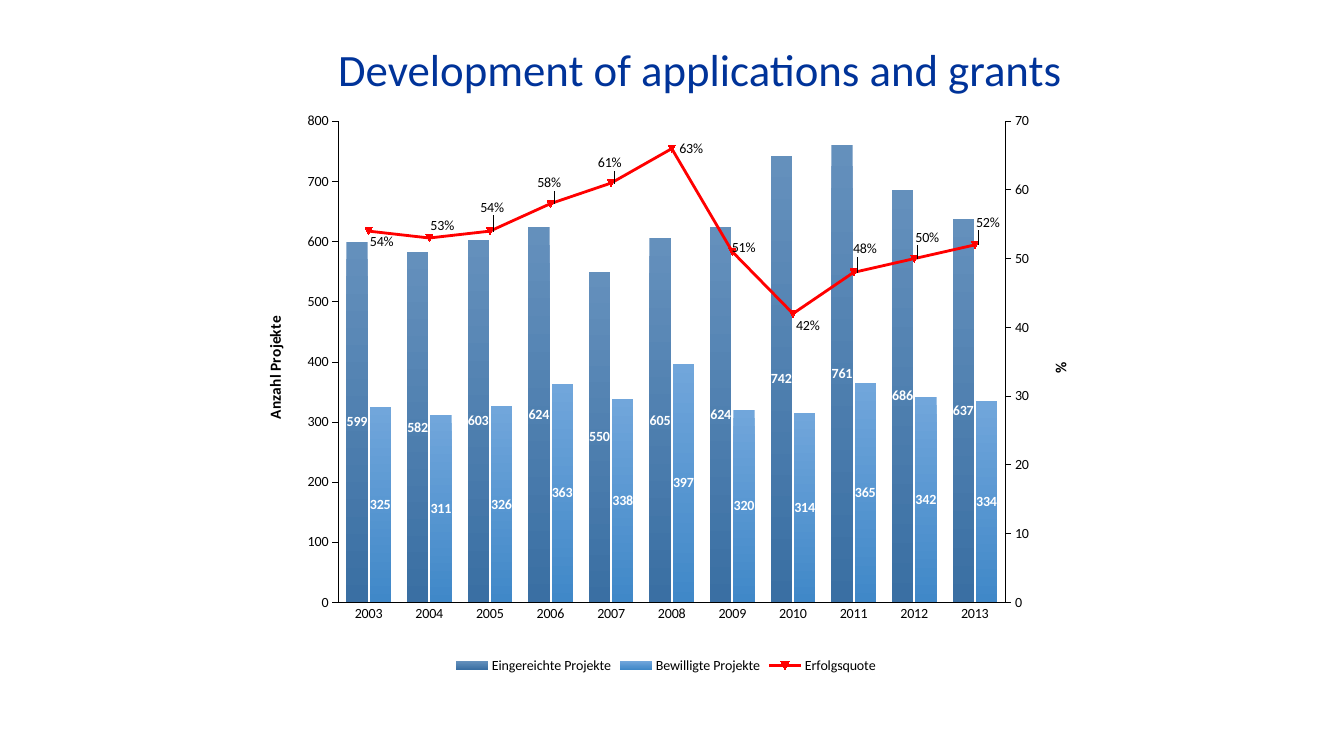
import copy
import dataclasses

import pptx
import pptx.chart.axis
import pptx.chart.data
import pptx.dml.color
import pptx.enum.chart
import pptx.enum.text
import pptx.oxml
import pptx.oxml.ns
import pptx.util

Pt = pptx.util.Pt
qn = pptx.oxml.ns.qn


@dataclasses.dataclass(frozen=True)
class Theme:
    """Colours, font and type sizes of the slide."""
    font: str = "Calibri"
    title: str = "003399"
    text: str = "000000"
    bar_label: str = "FFFFFF"
    rate: str = "FF0000"
    applications: tuple = ("6490BC", "3A6FA3")
    grants: tuple = ("71A6DB", "4088C8")
    title_size: int = 32
    axis_title_size: int = 11
    chart_size: int = 10


THEME = Theme()
SLIDE_WIDTH = pptx.util.Inches(13.33)
SLIDE_HEIGHT = pptx.util.Inches(7.5)
TITLE_SHARE = (21.68, 2.93, 60.84, 13.07)
CHART_SHARE = (15.98, 14.53, 67.14, 75.07)
PLOT_SHARE = {"x": 13.7, "y": 2, "w": 73.9, "h": 84.8}

YEARS = [str(year) for year in range(2003, 2014)]
APPLICATIONS = (599, 582, 603, 624, 550, 605, 624, 742, 761, 686, 637)
GRANTS = (325, 311, 326, 363, 338, 397, 320, 314, 365, 342, 334)
RATES = (54, 53, 54, 58, 61, 66, 51, 42, 48, 50, 52)
RATE_LABELS = (54, 53, 54, 58, 61, 63, 51, 42, 48, 50, 52)
RATE_LABEL_SHIFTS = (
    (-0.7, 1.8), (-0.7, -2.1), (-1.9, -4.2), (-2.3, -3.6), (-2.3, -3.5), (0, 0),
    (-0.9, -0.8), (-0.5, 2.1), (-0.9, -4.1), (-0.7, -3.7), (-0.7, -3.9),
)


def rgb(code):
    """Return the colour for a hex code."""
    return pptx.dml.color.RGBColor.from_string(code)


def place(share):
    """Turn percentages of the slide into left, top, width and height."""
    sides = (SLIDE_WIDTH, SLIDE_HEIGHT) * 2
    return [round(side * part / 100) for side, part in zip(sides, share)]


def style_font(font, size, color, bold=False):
    """Apply the theme font with a size, colour and weight."""
    font.name = THEME.font
    font.size = Pt(size)
    font.color.rgb = rgb(color)
    font.bold = bold


def manual_layout(**settings):
    """Build a chart layout element from its settings."""
    parts = "".join(f'<c:{name} val="{value}"/>' for name, value in settings.items())
    return pptx.oxml.parse_xml(
        f'<c:layout {pptx.oxml.ns.nsdecls("c")}><c:manualLayout>{parts}</c:manualLayout></c:layout>')


def add_title(slide, wording):
    """Place and format the slide title."""
    title = slide.shapes.title
    title.left, title.top, title.width, title.height = place(TITLE_SHARE)
    title.text_frame.text = wording
    title.text_frame.vertical_anchor = pptx.enum.text.MSO_ANCHOR.MIDDLE
    heading = title.text_frame.paragraphs[0]
    heading.alignment = pptx.enum.text.PP_ALIGN.CENTER
    heading.line_spacing = 0.9
    style_font(heading.font, THEME.title_size, THEME.title)


def title_axis(axis, wording):
    """Give an axis a bold title."""
    frame = axis.axis_title.text_frame
    frame.text = wording
    style_font(frame.paragraphs[0].font, THEME.axis_title_size, THEME.text, True)


def scale_axis(axis, top, step):
    """Set an axis to run from zero to its top value."""
    axis.minimum_scale = 0
    axis.maximum_scale = top
    axis.major_unit = step


def format_axes(chart):
    """Format the year axis and the left count axis."""
    ticks = pptx.enum.chart.XL_TICK_MARK
    for axis, tick, width in ((chart.category_axis, ticks.NONE, 0.75),
                              (chart.value_axis, ticks.OUTSIDE, 0.25)):
        axis.has_major_gridlines = False
        axis.major_tick_mark = tick
        axis.minor_tick_mark = ticks.NONE
        axis.format.line.color.rgb = rgb(THEME.text)
        axis.format.line.width = Pt(width)
    scale_axis(chart.value_axis, 800, 100)
    title_axis(chart.value_axis, "Anzahl Projekte")


def move_rate_to_right_axis(chart):
    """Turn the last bar series into a line on a right-hand axis."""
    plot_area = chart.element.find(".//" + qn("c:plotArea"))
    bars = plot_area.find(qn("c:barChart"))
    rate = bars.findall(qn("c:ser"))[-1]
    for bar_setting in rate.findall(qn("c:invertIfNegative")):
        rate.remove(bar_setting)
    line = pptx.oxml.parse_xml(
        f'<c:lineChart {pptx.oxml.ns.nsdecls("c")}><c:grouping val="standard"/>'
        '<c:varyColors val="0"/><c:marker val="1"/>'
        '<c:axId val="5001"/><c:axId val="5002"/></c:lineChart>')
    line.insert(2, rate)
    bars.addnext(line)

    right = copy.deepcopy(plot_area.find(qn("c:valAx")))
    hidden = copy.deepcopy(plot_area.find(qn("c:catAx")))
    for axis, own, other in ((right, "5002", "5001"), (hidden, "5001", "5002")):
        axis.find(qn("c:axId")).set("val", own)
        axis.find(qn("c:crossAx")).set("val", other)
        plot_area.findall(qn("c:valAx"))[-1].addnext(axis)
    right.find(qn("c:axPos")).set("val", "r")
    right.find(qn("c:crosses")).set("val", "max")
    pptx.chart.axis.CategoryAxis(hidden).visible = False
    percent_axis = pptx.chart.axis.ValueAxis(right)
    percent_axis.format.line.width = Pt(0.75)
    scale_axis(percent_axis, 70, 10)
    title_axis(percent_axis, "%")
    for body in plot_area.findall(".//" + qn("c:title") + "//" + qn("a:bodyPr")):
        body.set("rot", "-5400000")
        body.set("vert", "horz")


def format_bars(plot):
    """Shade the bars and label them in their centres."""
    plot.gap_width = 75
    plot.overlap = -9
    plot.vary_by_categories = False
    for series, shades in zip(plot.series, (THEME.applications, THEME.grants)):
        fill = series.format.fill
        fill.gradient()
        fill.gradient_angle = 270
        for stop, shade in zip(fill.gradient_stops, shades):
            stop.color.rgb = rgb(shade)
        labels = series.data_labels
        labels.show_value = True
        labels.position = pptx.enum.chart.XL_LABEL_POSITION.CENTER
        style_font(labels.font, THEME.chart_size, THEME.bar_label, True)


def format_rate(series):
    """Draw the success rate and label each of its points."""
    series.smooth = False
    series.format.line.color.rgb = rgb(THEME.rate)
    series.format.line.width = Pt(2)
    series.marker.size = 5
    series.marker.format.fill.solid()
    series.marker.format.fill.fore_color.rgb = rgb(THEME.rate)
    series.marker.format.line.color.rgb = rgb(THEME.rate)
    for index, value in enumerate(RATE_LABELS):
        label = series.points[index].data_label
        run = label.text_frame.paragraphs[0].add_run()
        run.text = f"{value}%"
        style_font(run.font, THEME.chart_size, THEME.text)
        label.position = pptx.enum.chart.XL_LABEL_POSITION.RIGHT


def shift_rate_labels(chart):
    """Move the rate labels clear of the line."""
    labels = chart.element.findall(".//" + qn("c:lineChart") + "//" + qn("c:dLbl"))
    for label, (across, down) in zip(labels, RATE_LABEL_SHIFTS):
        label.find(qn("c:idx")).addnext(manual_layout(x=across / 100, y=down / 100))


def add_grants_chart(slide):
    """Add the bars of projects with the line of the success rate."""
    data = pptx.chart.data.CategoryChartData()
    data.categories = YEARS
    data.add_series("Eingereichte Projekte", APPLICATIONS)
    data.add_series("Bewilligte Projekte", GRANTS)
    data.add_series("Erfolgsquote", RATES)
    chart = slide.shapes.add_chart(
        pptx.enum.chart.XL_CHART_TYPE.COLUMN_CLUSTERED, *place(CHART_SHARE), data).chart
    style_font(chart.font, THEME.chart_size, THEME.text)
    chart.has_title = False
    chart.has_legend = True
    chart.legend.position = pptx.enum.chart.XL_LEGEND_POSITION.BOTTOM
    chart.legend.include_in_layout = False
    format_axes(chart)
    move_rate_to_right_axis(chart)
    format_bars(chart.plots[0])
    format_rate(chart.plots[1].series[0])
    shift_rate_labels(chart)
    plot_area = chart.element.find(".//" + qn("c:plotArea"))
    for layout in plot_area.findall(qn("c:layout")):
        plot_area.remove(layout)
    shares = {side: part / 100 for side, part in PLOT_SHARE.items()}
    plot_area.insert(0, manual_layout(layoutTarget="inner", xMode="edge", yMode="edge", **shares))


def main():
    """Build the slide and save it."""
    deck = pptx.Presentation()
    deck.slide_width, deck.slide_height = SLIDE_WIDTH, SLIDE_HEIGHT
    slide = deck.slides.add_slide(deck.slide_layouts[5])
    add_title(slide, "Development of applications and grants")
    add_grants_chart(slide)
    deck.save("out.pptx")


if __name__ == "__main__":
    main()
